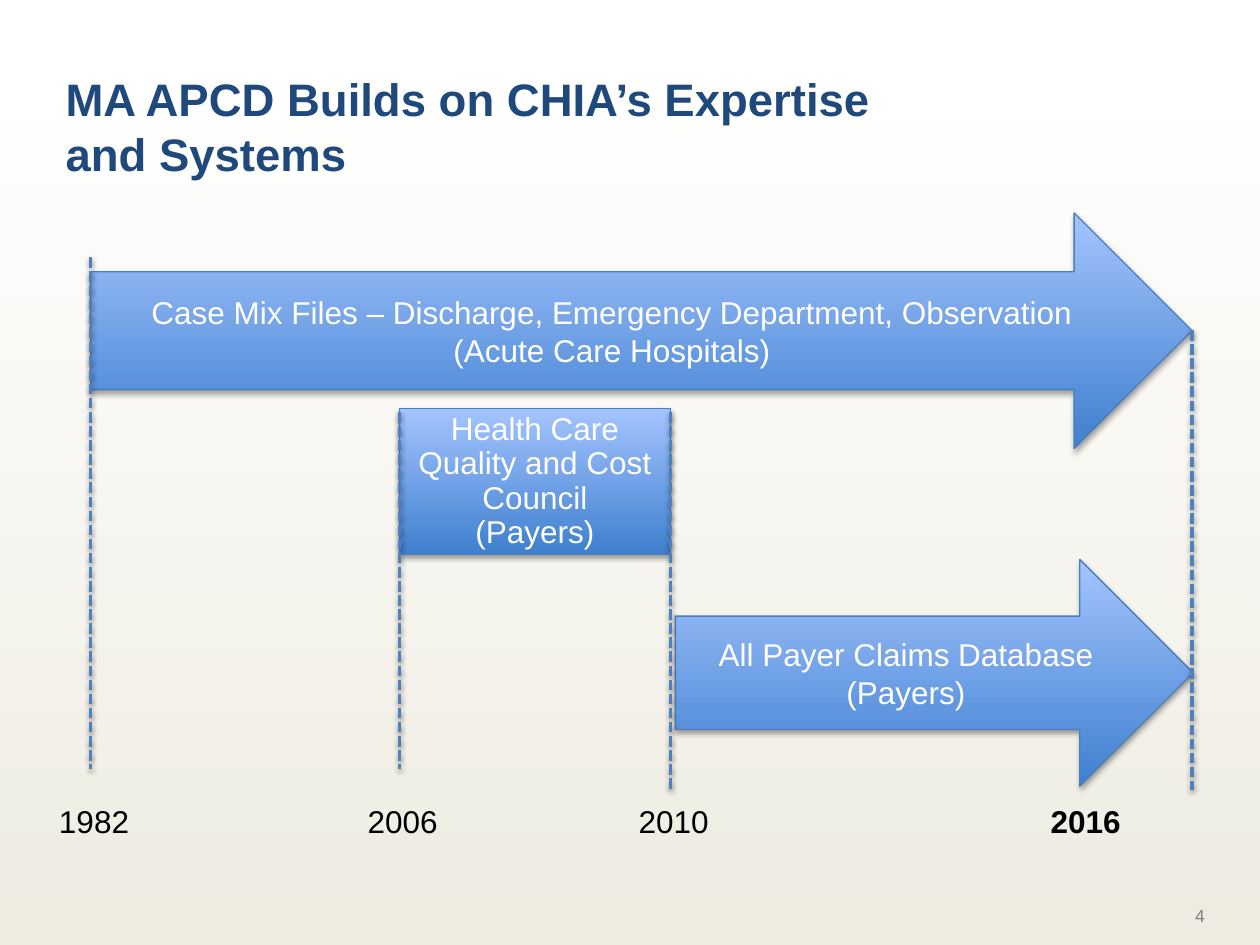
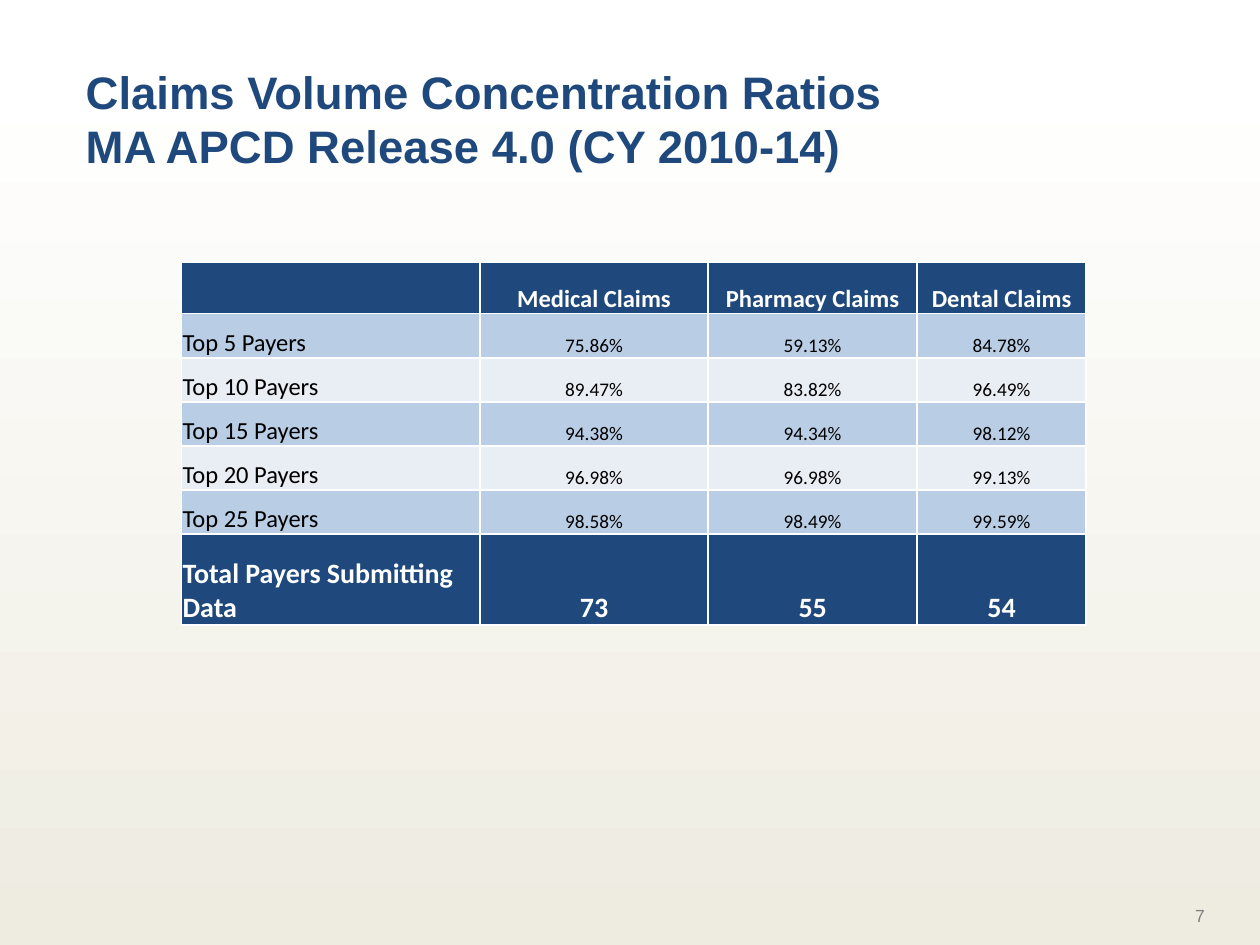
"""Build two slides on the MA APCD: a data timeline and a claims concentration table."""
from dataclasses import dataclass

from pptx import Presentation
from pptx.dml.color import RGBColor
from pptx.dml.fill import FillFormat
from pptx.enum.dml import MSO_LINE
from pptx.enum.shapes import MSO_CONNECTOR, MSO_SHAPE
from pptx.enum.text import MSO_ANCHOR, MSO_AUTO_SIZE, PP_ALIGN
from pptx.oxml import parse_xml
from pptx.oxml.ns import nsdecls
from pptx.presentation import Presentation as Deck
from pptx.slide import Slide
from pptx.table import _Cell as Cell
from pptx.text.text import TextFrame
from pptx.util import Pt

PX = 9144
NAVY, WHITE, BLACK, GRAY = "1F497D", "FFFFFF", "000000", "7F7F7F"
CREAM, BAND_DARK, BAND_LIGHT = "EEECE1", "B9CDE5", "E9EDF4"
SHAPE_TOP, SHAPE_BOTTOM, SHAPE_EDGE, MARKER_BLUE = "A4C4FF", "3F80CE", "4B7EBC", "4F81BD"

TITLE = {"name": "Arial", "size": Pt(26), "bold": True, "color": NAVY}
SHAPE_TEXT = {"name": "Arial", "size": Pt(18), "bold": False, "color": WHITE}
YEAR = SHAPE_TEXT | {"color": BLACK}
PAGE_NUMBER = {"name": "Arial", "size": Pt(10), "bold": False, "color": GRAY}
HEADER = {"name": "Calibri", "size": Pt(14), "bold": True, "color": WHITE}
ROW_LABEL = HEADER | {"bold": False, "color": BLACK}
RATIO = ROW_LABEL | {"size": Pt(11)}
TOTAL = HEADER | {"size": Pt(16)}


@dataclass(frozen=True)
class Box:
    """A rectangle in px."""
    left: int
    top: int
    width: int
    height: int

    def emu(self) -> tuple[int, ...]:
        """Return the four lengths in EMU."""
        return tuple(length * PX for length in (self.left, self.top, self.width, self.height))


@dataclass(frozen=True)
class Program:
    """A data program drawn as a filled shape on the timeline."""
    kind: MSO_SHAPE
    box: Box
    lines: tuple[str, ...]
    spacing: float | None = None


@dataclass(frozen=True)
class Milestone:
    """A dashed vertical marker with its year label."""
    year: str
    x: int
    top: int
    bottom: int
    label_left: int
    bold: bool = False


PROGRAMS = (
    Program(MSO_SHAPE.RIGHT_ARROW, Box(72, 169, 874, 187),
            ("Case Mix Files – Discharge, Emergency Department, Observation\v(Acute Care Hospitals)",)),
    Program(MSO_SHAPE.RECTANGLE, Box(317, 324, 215, 116),
            ("Health Care Quality and Cost Council", "(Payers)"), 19.6),
    Program(MSO_SHAPE.RIGHT_ARROW, Box(536, 444, 411, 180),
            ("All Payer Claims Database\v(Payers)",)),
)
MILESTONES = (
    Milestone("1982", 72, 204, 610, 37),
    Milestone("2006", 317, 327, 610, 282),
    Milestone("2010", 532, 327, 627, 497),
    Milestone("2016", 946, 262, 627, 824, True),
)
CLAIMS = (
    ("", "Medical Claims", "Pharmacy Claims", "Dental Claims"),
    ("Top 5 Payers", "75.86%", "59.13%", "84.78%"),
    ("Top 10 Payers", "89.47%", "83.82%", "96.49%"),
    ("Top 15 Payers", "94.38%", "94.34%", "98.12%"),
    ("Top 20 Payers", "96.98%", "96.98%", "99.13%"),
    ("Top 25 Payers", "98.58%", "98.49%", "99.59%"),
    ("Total Payers Submitting Data", "73", "55", "54"),
)
COLUMN_WIDTHS = (237, 181, 166, 134)
ROW_HEIGHTS = (41, 35, 35, 35, 35, 35, 72)


def color(value: str) -> RGBColor:
    """Turn a hex string into a colour."""
    return RGBColor.from_string(value)


def write(frame: TextFrame, lines: tuple[str, ...], style: dict,
          align: PP_ALIGN = PP_ALIGN.LEFT, spacing: float | None = None) -> None:
    """Fill a text frame with formatted paragraphs."""
    frame.text = "\n".join(lines)
    for para in frame.paragraphs:
        para.alignment = align
        if spacing:
            para.line_spacing = Pt(spacing)
        for span in para.runs:
            for name, value in style.items():
                if name == "color":
                    span.font.color.rgb = color(value)
                else:
                    setattr(span.font, name, value)


def fill_gradient(fill: FillFormat, start: str, end: str, offset: float = 0) -> None:
    """Apply a top-to-bottom gradient."""
    fill.gradient()
    fill.gradient_angle = 270
    for stop, value, position in zip(fill.gradient_stops, (start, end), (offset, 1)):
        stop.color.rgb = color(value)
        stop.position = position


def add_shadow(shape, distance: float, opacity: int) -> None:
    """Add a soft black shadow falling downwards."""
    shape._element.spPr.append(parse_xml(
        f'<a:effectLst {nsdecls("a")}><a:outerShdw blurRad="{Pt(3.1)}" dist="{Pt(distance)}" '
        f'dir="5400000" rotWithShape="0"><a:srgbClr val="{BLACK}">'
        f'<a:alpha val="{opacity * 1000}"/></a:srgbClr></a:outerShdw></a:effectLst>'))


def add_text(slide: Slide, box: Box, text: str, style: dict,
             align: PP_ALIGN = PP_ALIGN.LEFT, wrap: bool = True) -> TextFrame:
    """Add a one-line text box."""
    frame = slide.shapes.add_textbox(*box.emu()).text_frame
    frame.word_wrap = wrap
    write(frame, (text,), style, align)
    return frame


def add_page(deck: Deck, title: str, title_box: Box, number: str) -> Slide:
    """Add a slide with its title and page number."""
    page = deck.slides.add_slide(deck.slide_layouts[5])
    holder = page.shapes.title
    holder.left, holder.top, holder.width, holder.height = title_box.emu()
    frame = holder.text_frame
    frame.auto_size = MSO_AUTO_SIZE.NONE
    frame.vertical_anchor = MSO_ANCHOR.MIDDLE
    write(frame, (title,), TITLE)
    number_frame = add_text(page, Box(733, 707, 233, 40), number, PAGE_NUMBER, PP_ALIGN.RIGHT)
    number_frame.vertical_anchor = MSO_ANCHOR.MIDDLE
    return page


def add_program(slide: Slide, program: Program) -> None:
    """Draw a program shape."""
    shape = slide.shapes.add_shape(program.kind, *program.box.emu())
    fill_gradient(shape.fill, SHAPE_TOP, SHAPE_BOTTOM)
    shape.line.color.rgb = color(SHAPE_EDGE)
    shape.line.width = Pt(0.75)
    add_shadow(shape, 1.8, 35)
    shape.text_frame.vertical_anchor = MSO_ANCHOR.MIDDLE
    write(shape.text_frame, program.lines, SHAPE_TEXT, PP_ALIGN.CENTER, program.spacing)


def add_milestone(slide: Slide, milestone: Milestone) -> None:
    """Draw a dashed marker and its year."""
    x = milestone.x * PX
    marker = slide.shapes.add_connector(
        MSO_CONNECTOR.STRAIGHT, x, milestone.top * PX, x, milestone.bottom * PX)
    marker.line.color.rgb = color(MARKER_BLUE)
    marker.line.width = Pt(2)
    marker.line.dash_style = MSO_LINE.SQUARE_DOT
    add_shadow(marker, 1.6, 38)
    add_text(slide, Box(milestone.label_left, 632, 76, 40), milestone.year,
             YEAR | {"bold": milestone.bold}, wrap=False)


def format_cell(cell: Cell, text: str, style: dict, fill: str, align: PP_ALIGN) -> None:
    """Write a cell and set its fill, margins and white borders."""
    cell.fill.solid()
    cell.fill.fore_color.rgb = color(fill)
    cell.vertical_anchor = MSO_ANCHOR.BOTTOM
    cell.margin_left = cell.margin_right = cell.margin_top = PX
    cell.margin_bottom = 0
    write(cell.text_frame, (text,), style, align)
    properties = cell._tc.get_or_add_tcPr()
    for index, side in enumerate("LRTB"):
        properties.insert(index, parse_xml(
            f'<a:ln{side} {nsdecls("a")} w="{Pt(1)}"><a:solidFill>'
            f'<a:srgbClr val="{WHITE}"/></a:solidFill></a:ln{side}>'))


def add_claims_table(slide: Slide) -> None:
    """Draw the claims concentration table."""
    box = Box(144, 208, sum(COLUMN_WIDTHS), sum(ROW_HEIGHTS))
    table = slide.shapes.add_table(len(CLAIMS), len(COLUMN_WIDTHS), *box.emu()).table
    for column, width in zip(table.columns, COLUMN_WIDTHS):
        column.width = width * PX
    last = len(CLAIMS) - 1
    for row_index, (values, height) in enumerate(zip(CLAIMS, ROW_HEIGHTS)):
        table.rows[row_index].height = height * PX
        for column_index, text in enumerate(values):
            is_label = column_index == 0
            if row_index in (0, last):
                style, fill = (TOTAL if row_index else HEADER), NAVY
            else:
                style = ROW_LABEL if is_label else RATIO
                fill = BAND_DARK if row_index % 2 else BAND_LIGHT
            align = PP_ALIGN.LEFT if is_label else PP_ALIGN.CENTER
            format_cell(table.cell(row_index, column_index), text, style, fill, align)


def main() -> None:
    """Build and save the deck."""
    deck = Presentation()
    deck.slide_width, deck.slide_height = 1000 * PX, 750 * PX
    fill_gradient(deck.slide_master.background.fill, WHITE, CREAM, 0.07)

    timeline = add_page(deck, "MA APCD Builds on CHIA’s Expertise\vand Systems",
                        Box(42, 65, 828, 70), "4")
    for program in PROGRAMS:
        add_program(timeline, program)
    for milestone in MILESTONES:
        add_milestone(timeline, milestone)

    ratios = add_page(deck, "Claims Volume Concentration Ratios\vMA APCD Release 4.0 (CY 2010-14)",
                      Box(58, 59, 908, 70), "7")
    add_claims_table(ratios)
    deck.save("out.pptx")


if __name__ == "__main__":
    main()
